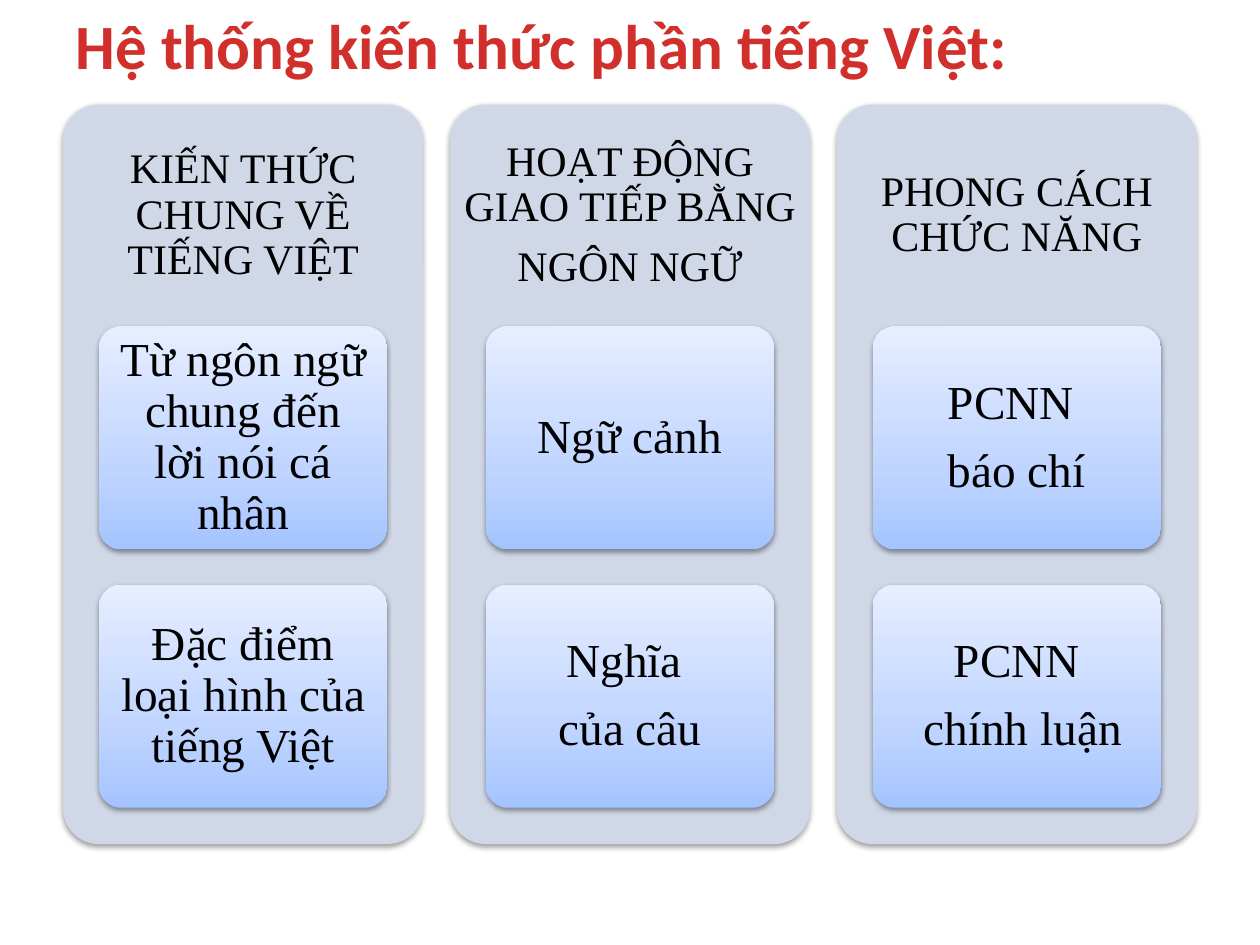
"""Build a slide with three topic columns, each holding a heading and two cards."""
from pptx import Presentation
from pptx.dml.color import RGBColor
from pptx.enum.shapes import MSO_SHAPE as Shape
from pptx.enum.text import MSO_ANCHOR as Anchor, PP_ALIGN as Align
from pptx.oxml import parse_xml
from pptx.oxml.ns import nsdecls
from pptx.util import Inches, Pt

TITLE = "Hệ thống kiến thức phần tiếng Việt:"
COLUMNS = [
    (["KIẾN THỨC CHUNG VỀ TIẾNG VIỆT"],
     [["Từ ngôn ngữ chung đến lời nói cá nhân"],
      ["Đặc điểm loại hình của tiếng Việt"]]),
    (["HOẠT ĐỘNG GIAO TIẾP BẰNG ", "NGÔN NGỮ"],
     [["Ngữ cảnh"], ["Nghĩa ", "của câu"]]),
    (["PHONG CÁCH CHỨC NĂNG"],
     [["PCNN ", "báo chí"], ["PCNN", " chính luận"]]),
]
CARD_STOPS = [(0, "A4C4FF"), (35, "BFD4FF"), (100, "E6EEFF")]

LEFT, TOP, PITCH = 0.5, 0.83, 3.07
PANEL_WIDTH, PANEL_HEIGHT = 2.86, 5.87
HEADING_HEIGHT = 0.3 * PANEL_HEIGHT
CARD_WIDTH, CARD_HEIGHT, CARD_PITCH = 0.8 * PANEL_WIDTH, 1.77, 2.05
CARD_INDENT = (PANEL_WIDTH - CARD_WIDTH) / 2
CARD_PADDING = 0.05


def color(value):
    return RGBColor.from_string(value)


def add_rounded(slide, area):
    shape = slide.shapes.add_shape(Shape.ROUNDED_RECTANGLE, *map(Inches, area))
    shape.adjustments[0] = 0.1
    shape.line.fill.background()
    shape._element.spPr.append(parse_xml(
        f'<a:effectLst {nsdecls("a")}><a:outerShdw blurRad="{Pt(3.1)}" dist="{Pt(1.6)}" '
        'dir="5400000" rotWithShape="0"><a:srgbClr val="000000"><a:alpha val="38000"/>'
        '</a:srgbClr></a:outerShdw></a:effectLst>'))
    return shape


def fill_gradient(shape, stops):
    marks = "".join(f'<a:gs pos="{share * 1000}"><a:srgbClr val="{value}"/></a:gs>'
                    for share, value in stops)
    gradient = parse_xml(f'<a:gradFill {nsdecls("a")} rotWithShape="1"><a:gsLst>{marks}'
                         '</a:gsLst><a:lin ang="16200000" scaled="0"/></a:gradFill>')
    shape._element.spPr.insert(2, gradient)


def add_text(slide, area, lines, size, inset_x, inset_y):
    frame = slide.shapes.add_textbox(*map(Inches, area)).text_frame
    frame.word_wrap = True
    frame.vertical_anchor = Anchor.MIDDLE
    frame.margin_left = frame.margin_right = Inches(inset_x)
    frame.margin_top = frame.margin_bottom = Inches(inset_y)
    frame.text = "\n".join(lines)
    for para in frame.paragraphs:
        para.alignment = Align.CENTER
        para.line_spacing = 0.9
        para.space_after = Pt(0.35 * size)
        para.font.size = Pt(size)
        para.font.name = "Times New Roman"
        para.font.color.rgb = color("000000")


def add_card(slide, left, top, lines):
    card = add_rounded(slide, (left, top, CARD_WIDTH, CARD_HEIGHT))
    fill_gradient(card, CARD_STOPS)
    area = (left + CARD_PADDING, top + CARD_PADDING,
            CARD_WIDTH - 2 * CARD_PADDING, CARD_HEIGHT - 2 * CARD_PADDING)
    add_text(slide, area, lines, 27, 0.07, 0.06)


def add_title(slide):
    box = slide.shapes.add_textbox(Inches(LEFT), 0, Inches(8.08), Inches(0.71))
    box.text_frame.word_wrap = True
    para = box.text_frame.paragraphs[0]
    para.text = TITLE
    para.font.size = Pt(36)
    para.font.name = "Calibri"
    para.font.bold = True
    para.font.color.rgb = color("D02F2C")


def main():
    deck = Presentation()
    deck.slide_width, deck.slide_height = Inches(10), Inches(7.5)
    slide = deck.slides.add_slide(deck.slide_layouts[6])
    for column, (heading, cards) in enumerate(COLUMNS):
        left = LEFT + column * PITCH
        panel = add_rounded(slide, (left, TOP, PANEL_WIDTH, PANEL_HEIGHT))
        panel.fill.solid()
        panel.fill.fore_color.rgb = color("D0D8E8")
        add_text(slide, (left, TOP, PANEL_WIDTH, HEADING_HEIGHT), heading, 24, 0.1, 0.1)
        for row, lines in enumerate(cards):
            add_card(slide, left + CARD_INDENT, TOP + HEADING_HEIGHT + row * CARD_PITCH, lines)
    add_title(slide)
    deck.save("out.pptx")


if __name__ == "__main__":
    main()
